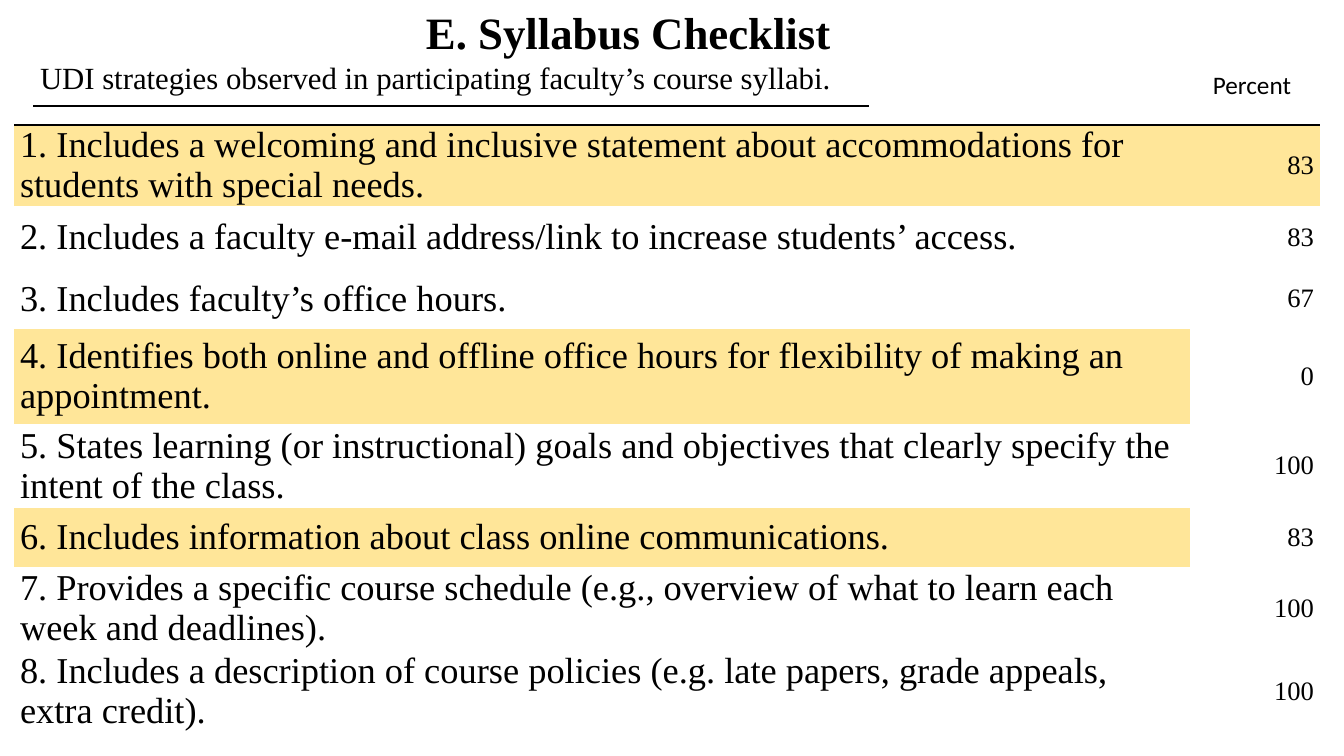
from lxml import etree
from pptx import Presentation
from pptx.dml.color import RGBColor
from pptx.enum.text import MSO_ANCHOR as ANCHOR, MSO_AUTO_SIZE as AUTO_SIZE, PP_ALIGN as ALIGN
from pptx.oxml import parse_xml
from pptx.oxml.ns import nsdecls, qn
from pptx.util import Pt

PX = 914400 / 100.8
BLACK = RGBColor(0x00, 0x00, 0x00)
WHITE = RGBColor(0xFF, 0xFF, 0xFF)
AMBER = RGBColor(0xFF, 0xE6, 0x99)
SERIF = "Times New Roman"
NO_STYLE = "{2D5ABB26-0587-4C30-8999-92F81FD0307C}"


def px(*lengths):
    """Turn px lengths into a list of EMU lengths."""
    return [round(length * PX) for length in lengths]


def write(target, text, size, font=SERIF, bold=False, align=ALIGN.LEFT,
          fill=None, anchor=ANCHOR.MIDDLE, inset=6, border=None):
    """Fill a table cell (when fill is given) or a text box with formatted text."""
    frame = target.text_frame
    frame.word_wrap = True
    paragraph = frame.paragraphs[0]
    paragraph.alignment = align
    run = paragraph.add_run()
    run.text = text
    run.font.size, run.font.name, run.font.bold = Pt(size), font, bold
    run.font.color.rgb = BLACK
    if fill is None:
        frame.auto_size = AUTO_SIZE.SHAPE_TO_FIT_TEXT
        return
    paragraph.space_before = paragraph.space_after = Pt(3)
    target.vertical_anchor = anchor
    target.margin_left, target.margin_right = px(inset, inset)
    target.margin_top = target.margin_bottom = 0
    target.fill.solid()
    target.fill.fore_color.rgb = fill
    if border:
        line = parse_xml(f'<a:{border} {nsdecls("a")} w="12700"/>')
        solid = etree.SubElement(line, qn("a:solidFill"))
        etree.SubElement(solid, qn("a:srgbClr"), val=str(BLACK))
        target._tc.get_or_add_tcPr().insert(0, line)


deck = Presentation()
deck.slide_width, deck.slide_height = px(1344, 756)
slide = deck.slides.add_slide(deck.slide_layouts[6])
shapes = slide.shapes

# Strategy, percent, row height, strategy fill, percent fill
strategies = [
    ("1. Includes a welcoming and inclusive statement about accommodations for students with special needs.",
     83, 81, AMBER, AMBER),
    ("2. Includes a faculty e-mail address/link to increase students’ access.", 83, 63, WHITE, WHITE),
    ("3. Includes faculty’s office hours.", 67, 60, WHITE, WHITE),
    ("4. Identifies both online and offline office hours for flexibility of making an appointment.",
     0, 95, AMBER, WHITE),
    ("5. States learning (or instructional) goals and objectives that clearly specify the intent of the class.",
     100, 84, WHITE, WHITE),
    ("6. Includes information about class online communications.", 83, 59, AMBER, WHITE),
    ("7. Provides a specific course schedule (e.g., overview of what to learn each week and deadlines).",
     100, 83, WHITE, WHITE),
    ("8. Includes a description of course policies (e.g. late papers, grade appeals, extra credit).",
     100, 83, WHITE, WHITE),
]
checklist_height = sum(height for _, _, height, _, _ in strategies)
checklist = shapes.add_table(len(strategies), 2, *px(14, 125, 1306, checklist_height)).table
checklist.columns[0].width, checklist.columns[1].width = px(1176, 130)
for row, (strategy, percent, height, strategy_fill, percent_fill) in enumerate(strategies):
    checklist.rows[row].height = px(height)[0]
    border = "lnT" if row == 0 else None
    write(checklist.cell(row, 0), strategy, 26, fill=strategy_fill, border=border,
          anchor=ANCHOR.TOP if row == 0 else ANCHOR.MIDDLE)
    write(checklist.cell(row, 1), str(percent), 19, fill=percent_fill, border=border,
          align=ALIGN.RIGHT)

write(shapes.add_textbox(*px(167, 0, 923, 64)), "E. Syllabus Checklist", 32,
      bold=True, align=ALIGN.CENTER)
write(shapes.add_textbox(*px(1203, 64, 103, 41)), "Percent", 18, font="Calibri")

subtitle = shapes.add_table(1, 1, *px(33, 62, 836, 44)).table
write(subtitle.cell(0, 0), "UDI strategies observed in participating faculty’s course syllabi.", 22,
      fill=WHITE, anchor=ANCHOR.TOP, inset=7, border="lnB")

for table in (checklist, subtitle):
    table.first_row = table.horz_banding = False
    table._tbl.tblPr.find(qn("a:tableStyleId")).text = NO_STYLE

deck.save("out.pptx")
